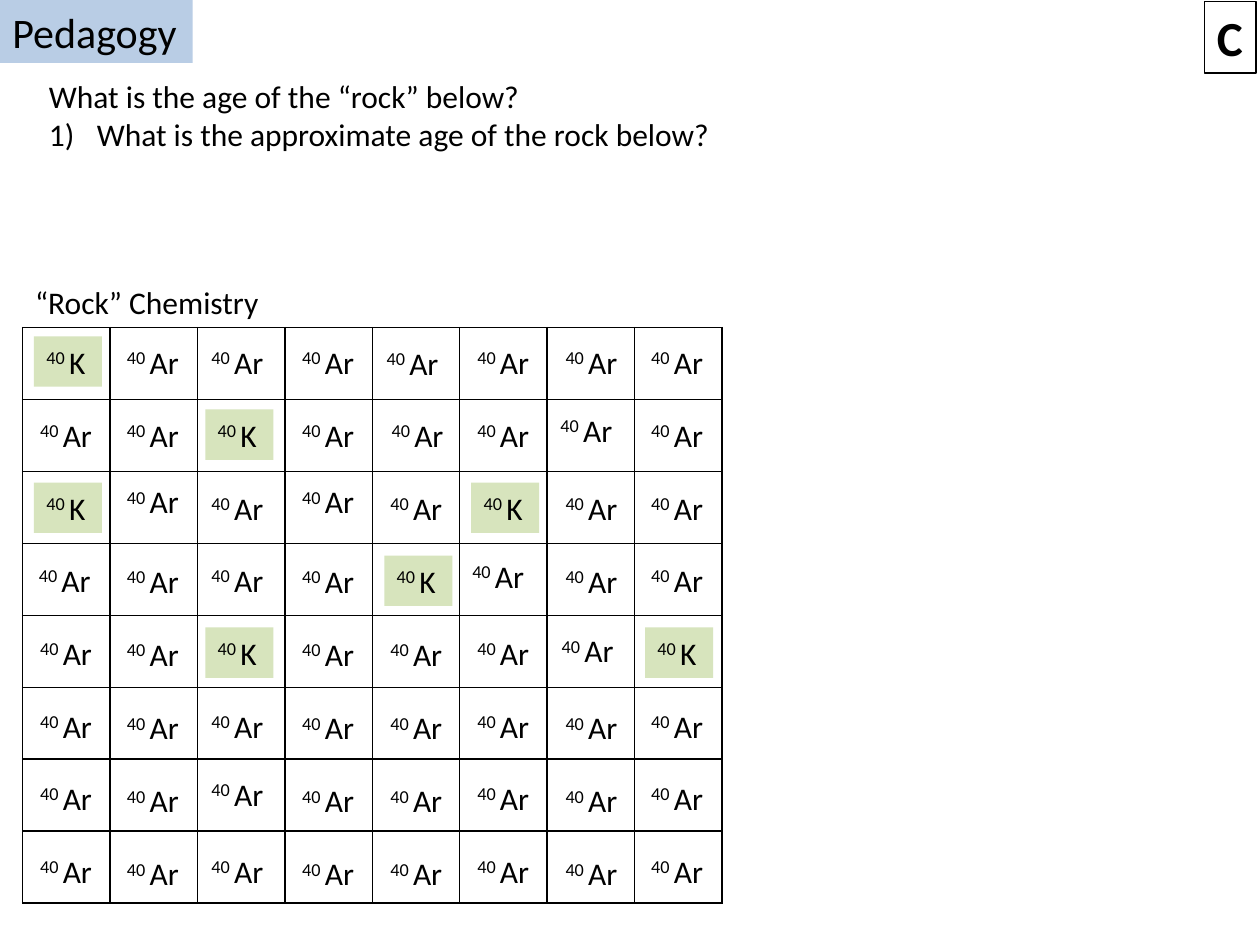
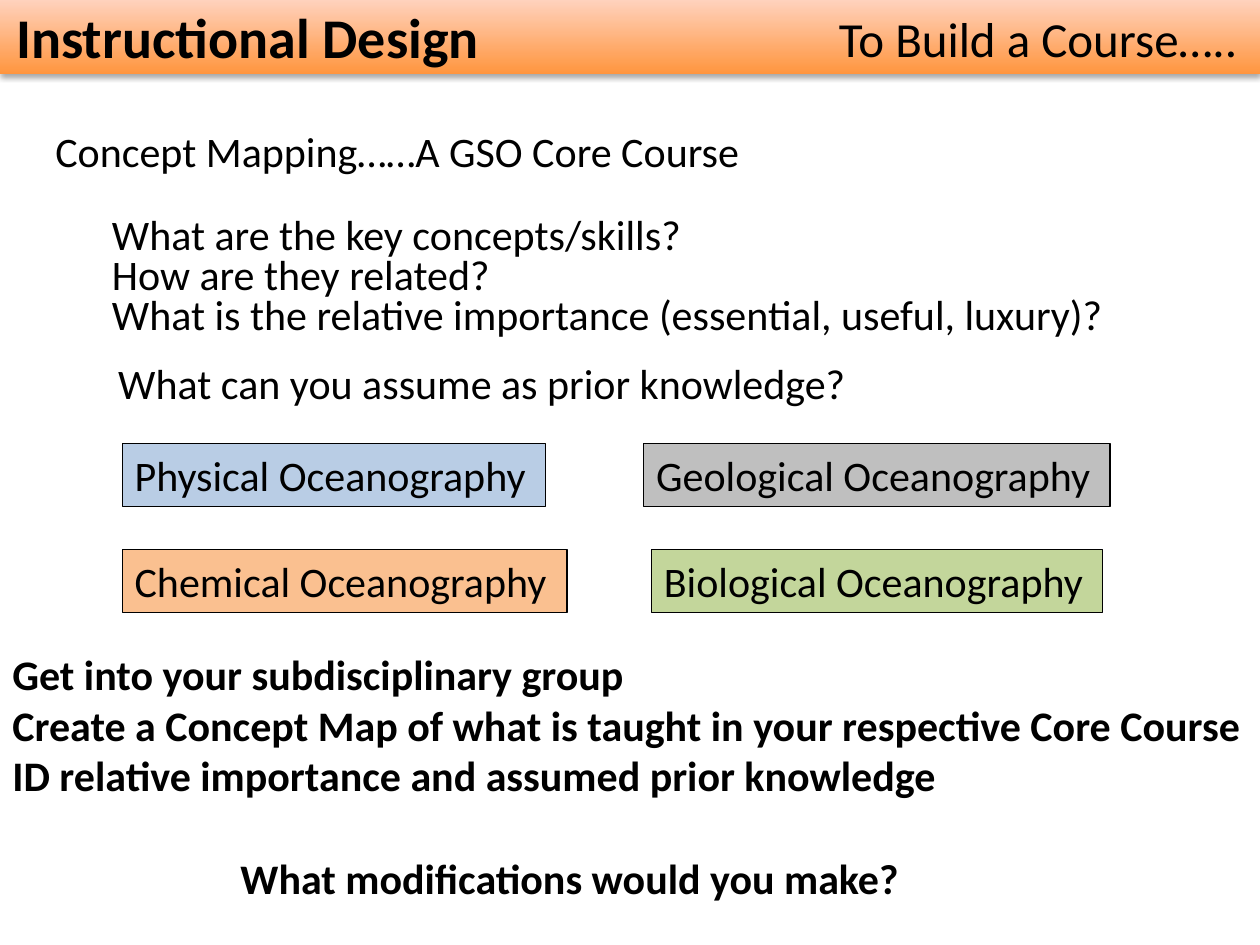
from dataclasses import dataclass
from typing import NamedTuple, Optional

from lxml import etree
from pptx import Presentation
from pptx.dml.color import RGBColor
from pptx.enum.shapes import MSO_SHAPE
from pptx.enum.text import MSO_AUTO_SIZE
from pptx.oxml import parse_xml
from pptx.oxml.ns import nsdecls, qn
from pptx.slide import Slide
from pptx.util import Emu, Pt

RECT = MSO_SHAPE.RECTANGLE
GROW = MSO_AUTO_SIZE.SHAPE_TO_FIT_TEXT
EMU_PER_PX = 9144  # 100 px to the inch


@dataclass(frozen=True)
class Theme:
    font: str = "Calibri"
    ink: str = "000000"
    blue: str = "B9CDE5"
    orange: str = "FAC090"
    grey: str = "BFBFBF"
    green: str = "C3D69B"
    potassium: str = "D7E4BD"
    band_bottom: str = "FF953E"
    band_top: str = "FFD2BD"
    small: int = 18
    body: int = 24
    large: int = 28
    title: int = 32
    outline: float = 0.75
    grid_line: float = 1


THEME = Theme()


class Box(NamedTuple):
    left: int
    top: int
    width: int
    height: int


class Discipline(NamedTuple):
    name: str
    box: Box
    fill: str


# Rock grid: K marks the cells that still hold potassium
ROCK = [
    "K.......",
    "..K.....",
    "K....K..",
    "....K...",
    "..K....K",
    "........",
    "........",
    "........",
]
GRID = Box(18, 260, 555, 457)
ISOTOPE_LEFT = [22, 91, 158, 230, 300, 369, 439, 507]
ISOTOPE_TOP = 267
ROW_PITCH = 57.75
LOOSE_PITCH = 58
LOOSE_COLUMNS = {1, 3, 4, 6}
# (row, column): shift of a label off the grid
NUDGES = {
    (0, 4): (-3, 1), (1, 4): (1, 0), (1, 6): (-4, -4),
    (2, 1): (0, -5), (2, 3): (0, -5), (3, 0): (-1, 0),
    (3, 5): (-4, -3), (4, 6): (-3, -3), (6, 2): (0, -3),
}

DISCIPLINES = [
    Discipline("Physical Oceanography", Box(97, 352, 336, 50), THEME.blue),
    Discipline("Chemical Oceanography", Box(97, 436, 353, 50), THEME.orange),
    Discipline("Geological Oceanography", Box(511, 352, 370, 50), THEME.grey),
    Discipline("Biological Oceanography", Box(517, 436, 358, 50), THEME.green),
]


def px(value: int) -> Emu:
    return Emu(value * EMU_PER_PX)


def rgb(value: str) -> RGBColor:
    return RGBColor.from_string(value)


def add_text(s: Slide, box: Box, text: str, *, size: int = THEME.body,
             bold: bool = False, fill: Optional[str] = None,
             outlined: bool = False, spacing: Optional[float] = None,
             wrap: bool = False, sup: str = "", numbered: tuple[int, ...] = ()):
    """Draw a text box, one paragraph a line; sup is a raised prefix."""
    sp = s.shapes.add_textbox(*map(px, box))
    if fill:
        sp.fill.solid()
        sp.fill.fore_color.rgb = rgb(fill)
    if outlined:
        sp.line.color.rgb = rgb(THEME.ink)
        sp.line.width = Pt(THEME.outline)
    tf = sp.text_frame
    tf.word_wrap = wrap
    tf.auto_size = GROW
    for i, line in enumerate(text.split("\n")):
        p = tf.add_paragraph() if i else tf.paragraphs[0]
        if i in numbered:
            pPr = p._p.get_or_add_pPr()
            pPr.set("marL", str(px(38)))
            pPr.set("indent", str(px(-38)))
            etree.SubElement(pPr, qn("a:buAutoNum"), type="arabicParenR")
        if spacing:
            p.line_spacing = spacing
        for part, baseline in ((sup, 30000), (line, 0)):
            if not part:
                continue
            r = p.add_run()
            r.text = part
            r.font.name = THEME.font
            r.font.size = Pt(size)
            r.font.bold = bold
            r.font.color.rgb = rgb(THEME.ink)
            if baseline:
                r._r.get_or_add_rPr().set("baseline", str(baseline))


def add_grid(s: Slide, box: Box, count: int) -> None:
    """Draw an empty square table with a thin border on every cell."""
    table = s.shapes.add_table(count, count, *map(px, box)).table
    table.first_row = table.horz_banding = False
    for column in table.columns:
        column.width = px(box.width) // count
    for row in table.rows:
        row.height = px(box.height) // count
    for cell in table.iter_cells():
        cell.fill.background()
        tcPr = cell._tc.get_or_add_tcPr()
        for i, side in enumerate(("lnL", "lnR", "lnT", "lnB")):
            tcPr.insert(i, parse_xml(
                f'<a:{side} {nsdecls("a")} w="{Pt(THEME.grid_line)}"><a:solidFill>'
                f'<a:srgbClr val="{THEME.ink}"/></a:solidFill></a:{side}>'))


def add_isotope(s: Slide, row: int, col: int, is_potassium: bool) -> None:
    pitch = LOOSE_PITCH if col in LOOSE_COLUMNS else ROW_PITCH
    dx, dy = NUDGES.get((row, col), (0, 0))
    left = ISOTOPE_LEFT[col] + dx
    top = ISOTOPE_TOP + round(row * pitch) + dy
    if is_potassium:
        add_text(s, Box(left + 5, top, 54, 40), "K", sup="40 ",
                 size=THEME.small, fill=THEME.potassium)
    else:
        add_text(s, Box(left, top, 64, 40), "Ar", sup="40 ", size=THEME.small)


def add_band(s: Slide, box: Box) -> None:
    """Draw the shaded header band with its soft shadow."""
    sp = s.shapes.add_shape(RECT, *map(px, box))
    sp.line.fill.background()
    sp.fill.gradient()
    sp.fill.gradient_angle = 90
    for stop, colour in zip(sp.fill.gradient_stops,
                            (THEME.band_bottom, THEME.band_top)):
        stop.color.rgb = rgb(colour)
    sp._element.spPr.append(parse_xml(
        f'<a:effectLst {nsdecls("a")}><a:outerShdw blurRad="40000" dist="23000" '
        f'dir="5400000" rotWithShape="0"><a:srgbClr val="{THEME.ink}">'
        '<a:alpha val="35000"/></a:srgbClr></a:outerShdw></a:effectLst>'))


def build_rock_slide(s: Slide) -> None:
    # Heading and question
    add_text(s, Box(0, 0, 153, 50), "Pedagogy", fill=THEME.blue)
    add_text(s, Box(29, 56, 550, 101),
             "What is the age of the “rock” below?\n"
             "What is the approximate age of the rock below?",
             size=THEME.small, numbered=(1,))
    add_text(s, Box(956, 1, 41, 57), "C", size=THEME.large, bold=True, outlined=True)
    # Rock chemistry
    add_text(s, Box(18, 220, 199, 40), "“Rock” Chemistry", size=THEME.small)
    add_grid(s, GRID, len(ROCK))
    for row, cells in enumerate(ROCK):
        for col, mark in enumerate(cells):
            add_isotope(s, row, col, mark == "K")


def build_design_slide(s: Slide) -> None:
    # Header
    add_band(s, Box(0, 0, 1000, 59))
    add_text(s, Box(3, -3, 391, 64), "Instructional Design",
             size=THEME.title, bold=True)
    add_text(s, Box(656, 2, 344, 57), "To Build a Course…..", size=THEME.large)
    # Concept mapping questions
    add_text(s, Box(34, 95, 579, 50), "Concept Mapping……A GSO Core Course")
    add_text(s, Box(79, 168, 817, 108),
             "What are the key concepts/skills?\n"
             "How are they related?\n"
             "What is the relative importance (essential, useful, luxury)?",
             spacing=0.8)
    add_text(s, Box(84, 279, 604, 50), "What can you assume as prior knowledge?")
    # Subdisciplines
    for d in DISCIPLINES:
        add_text(s, d.box, d.name, fill=d.fill, outlined=True)
    # Group task
    add_text(s, Box(0, 510, 1006, 131),
             "Get into your subdisciplinary group\n"
             "Create a Concept Map of what is taught in your respective Core Course\n"
             "ID relative importance and assumed prior knowledge", bold=True)
    add_text(s, Box(181, 672, 612, 50), "What modifications would you make?",
             bold=True, wrap=True)


def main() -> None:
    prs = Presentation()
    prs.slide_width, prs.slide_height = px(1000), px(750)
    blank = prs.slide_layouts[6]
    for build in (build_rock_slide, build_design_slide):
        build(prs.slides.add_slide(blank))
    prs.save("out.pptx")


if __name__ == "__main__":
    main()
